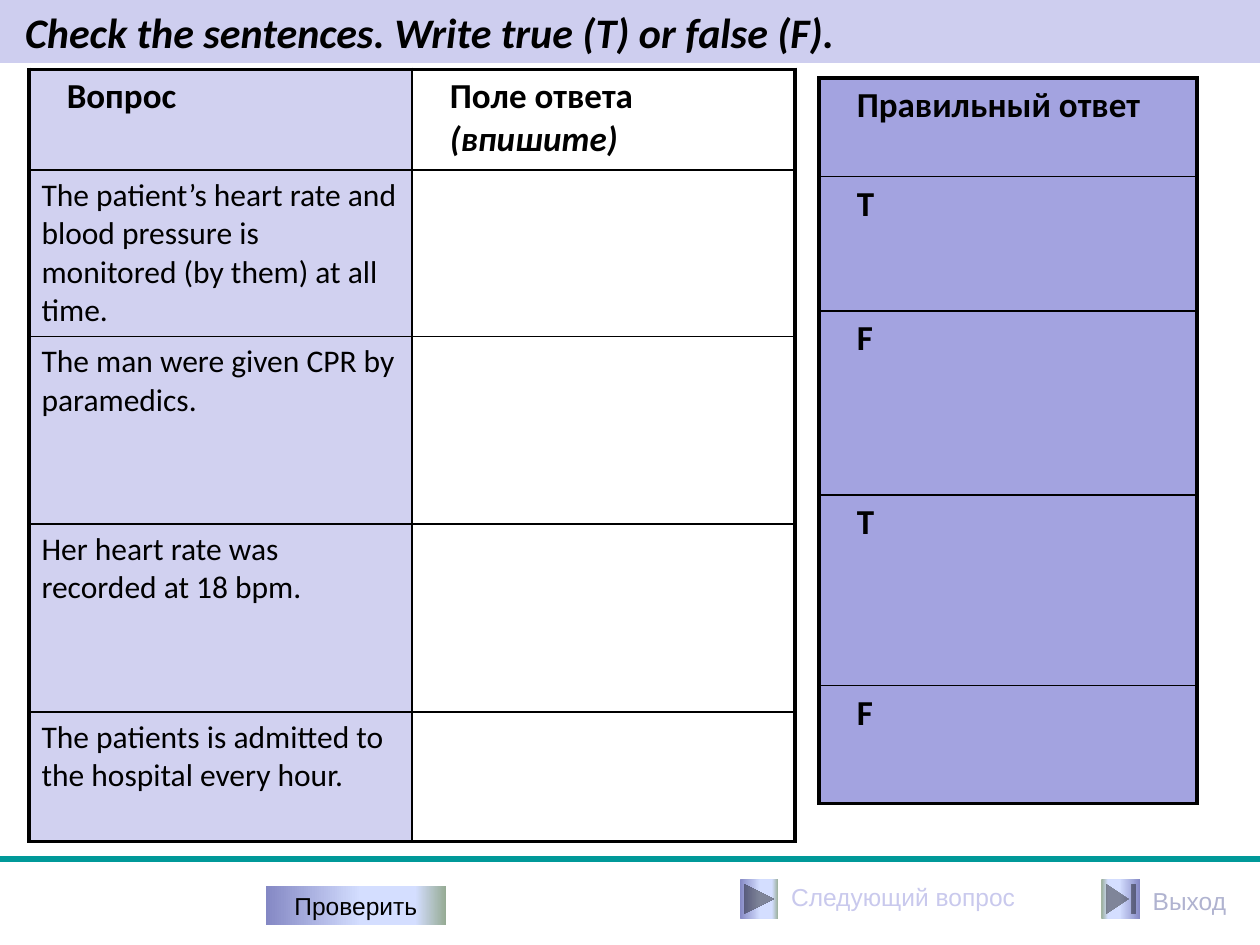
from lxml import etree
from pptx import Presentation
from pptx.dml.color import RGBColor
from pptx.enum import shapes, text
from pptx.oxml import ns
from pptx.util import Inches, Pt

COLORS = {
    "black": "000000", "title": "CECEEF", "question": "D1D1F0", "answer": "A3A3E0",
    "rule": "009999", "next": "C9C9ED", "exit": "B0B3D0",
}
SHEEN = [(0, "8488C4"), (53, "D4DEFF"), (83, "D4DEFF"), (100, "96AB94")]
SHEEN_REVERSED = [(100 - pos, color) for pos, color in reversed(SHEEN)]

TITLE = "Check the sentences. Write true (T) or false (F)."
QUIZ = [
    ("The patient’s heart rate and blood pressure is monitored (by them) at all time.", "T"),
    ("The man were given CPR by paramedics.", "F"),
    ("Her heart rate was recorded at 18 bpm.", "T"),
    ("The patients is admitted to the hospital every hour.", "F"),
]


def rgb(name):
    return RGBColor.from_string(COLORS[name])


def sub(parent, tag, **attrs):
    return etree.SubElement(parent, ns.qn(tag), attrs)


def format_runs(p, size, font="Calibri", color="black", bold=False, italic=False):
    for r in p.runs:
        r.font.size, r.font.name = Pt(size), font
        r.font.bold, r.font.italic = bold, italic
        r.font.color.rgb = rgb(color)


def indent(p, inches):
    pPr = p._p.get_or_add_pPr()
    pPr.set("marL", str(Inches(inches)))
    pPr.set("indent", "0")


def set_gradient(sp, stops):
    """Fill a shape from left to right with the given stops and no outline."""
    sp.shadow.inherit = False
    sp.line.fill.background()
    sp.fill.gradient()
    sp.fill.gradient_angle = 0
    gs_list = sp._element.spPr.find(".//" + ns.qn("a:gsLst"))
    for gs in list(gs_list):
        gs_list.remove(gs)
    for pos, color in stops:
        gs = sub(gs_list, "a:gs", pos=str(pos * 1000))
        sub(gs, "a:srgbClr", val=color)


def add_title(s, x, y, w, h):
    sp = s.shapes.title
    sp.left, sp.top, sp.width, sp.height = map(Inches, (x, y, w, h))
    sp.fill.solid()
    sp.fill.fore_color.rgb = rgb("title")
    tf = sp.text_frame
    tf.text = TITLE
    tf.word_wrap = True
    tf.vertical_anchor = text.MSO_ANCHOR.MIDDLE
    p = tf.paragraphs[0]
    p.alignment = text.PP_ALIGN.LEFT
    indent(p, 0.1)
    format_runs(p, 24, bold=True, italic=True)


def add_grid(s, x, y, col_widths, row_heights, fills):
    """Table with a heavy frame, thin inner lines and one fill per column."""
    rows, cols = len(row_heights), len(col_widths)
    table = s.shapes.add_table(rows, cols, Inches(x), Inches(y),
                               Inches(sum(col_widths)), Inches(sum(row_heights))).table
    table.first_row = table.horz_banding = False
    for column, width in zip(table.columns, col_widths):
        column.width = Inches(width)
    for row, height in zip(table.rows, row_heights):
        row.height = Inches(height)
    for i in range(rows):
        for j in range(cols):
            cell = table.cell(i, j)
            tcPr = cell._tc.get_or_add_tcPr()
            outer = {"L": j == 0, "R": j == cols - 1, "T": i == 0, "B": i == rows - 1}
            for side, heavy in outer.items():
                ln = sub(tcPr, "a:ln" + side, w=str(Pt(2.25 if heavy else 1)))
                sub(sub(ln, "a:solidFill"), "a:srgbClr", val=COLORS["black"])
            if fills[j]:
                cell.fill.solid()
                cell.fill.fore_color.rgb = rgb(fills[j])
            else:
                cell.fill.background()
    return table


def write_heading(cell, words):
    cell.text_frame.text = words
    p = cell.text_frame.paragraphs[0]
    indent(p, 0.2)
    format_runs(p, 20, bold=True)
    return p


def add_questions(s, x, y):
    table = add_grid(s, x, y, [3.04, 3.04], [0.8, 1.32, 1.49, 1.49, 1.03], ["question", None])
    write_heading(table.cell(0, 0), "Вопрос")
    p = write_heading(table.cell(0, 1), "Поле ответа ")
    p.add_run().text = "(впишите)"
    format_runs(p, 20, bold=True)
    p.runs[1].font.italic = True
    for i, (question, _) in enumerate(QUIZ, 1):
        tf = table.cell(i, 0).text_frame
        tf.text = question
        format_runs(tf.paragraphs[0], 18)


def add_answers(s, x, y):
    table = add_grid(s, x, y, [3], [0.78, 1.07, 1.46, 1.51, 0.94], ["answer"])
    for i, words in enumerate(["Правильный ответ"] + [answer for _, answer in QUIZ]):
        write_heading(table.cell(i, 0), words)


def add_rule(s, y, width):
    line = s.shapes.add_connector(shapes.MSO_CONNECTOR.STRAIGHT,
                                  0, Inches(y), Inches(width), Inches(y))
    line.line.color.rgb = rgb("rule")
    line.line.width = Pt(3.25)
    sub(line._element.spPr, "a:effectLst")


def add_check_button(s, x, y, w, h):
    sp = s.shapes.add_shape(shapes.MSO_SHAPE.RECTANGLE, *map(Inches, (x, y, w, h)))
    set_gradient(sp, SHEEN)
    tf = sp.text_frame
    tf.text = "Проверить"
    tf.vertical_anchor = text.MSO_ANCHOR.MIDDLE
    tf.paragraphs[0].alignment = text.PP_ALIGN.CENTER
    format_runs(tf.paragraphs[0], 14, "Arial")


def add_nav(s, x, y, w, label, color, preset, stops, spacing=1.0):
    """Square action button with its label to the right, as one group."""
    side = 0.31
    group = s.shapes.add_group_shape()
    button = group.shapes.add_shape(preset, *map(Inches, (x, y, side, side)))
    set_gradient(button, stops)
    box = group.shapes.add_textbox(*map(Inches, (x + side, y, w - side, side)))
    tf = box.text_frame
    tf.word_wrap = True
    tf.text = label
    tf.paragraphs[0].line_spacing = spacing
    format_runs(tf.paragraphs[0], 14, "Arial", color)


def main():
    prs = Presentation()
    prs.slide_width, prs.slide_height = Inches(10), Inches(7.5)
    s = prs.slides.add_slide(prs.slide_layouts[5])
    add_title(s, 0, 0, 10, 0.5)
    add_check_button(s, 2.11, 7.03, 1.43, 0.31)
    add_rule(s, 6.82, 10)
    add_questions(s, 0.23, 0.55)
    add_answers(s, 6.5, 0.62)
    add_nav(s, 5.87, 6.98, 2.29, "Следующий вопрос", "next",
            shapes.MSO_SHAPE.ACTION_BUTTON_FORWARD_OR_NEXT, SHEEN, 0.9)
    add_nav(s, 8.74, 6.98, 1.26, "Выход", "exit",
            shapes.MSO_SHAPE.ACTION_BUTTON_END, SHEEN_REVERSED)
    prs.save("out.pptx")


if __name__ == "__main__":
    main()
